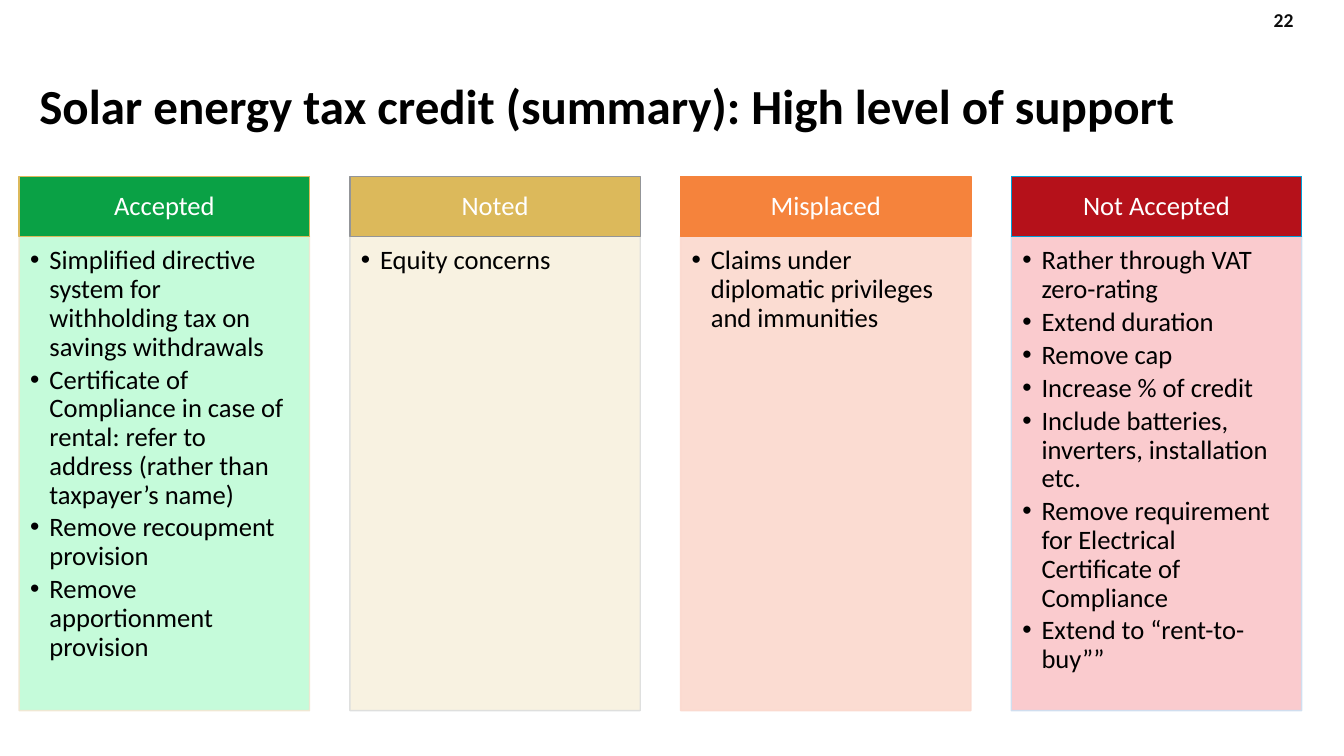
from dataclasses import dataclass

from lxml.etree import SubElement
from pptx import Presentation
from pptx.dml.color import RGBColor
from pptx.enum.shapes import MSO_SHAPE
from pptx.enum.text import MSO_ANCHOR, MSO_AUTO_SIZE, PP_ALIGN
from pptx.oxml.ns import qn
from pptx.shapes.autoshape import Shape
from pptx.slide import Slide
from pptx.util import Length, Pt

PX = 9144  # 100 px to the inch
FONT = "Calibri"

BLACK = RGBColor(0x00, 0x00, 0x00)
INK = RGBColor(0x0D, 0x0D, 0x0D)
WHITE = RGBColor(0xFF, 0xFF, 0xFF)
GREEN = RGBColor(0x0A, 0xA1, 0x45)
MINT = RGBColor(0xBF, 0xFB, 0xD7)
GOLD = RGBColor(0xDC, 0xB9, 0x5B)
SAND = RGBColor(0xF2, 0xE6, 0xD2)
CREAM = RGBColor(0xF8, 0xF1, 0xDE)
GREY = RGBColor(0x93, 0x95, 0x98)
SILVER = RGBColor(0xDC, 0xDD, 0xDD)
ORANGE = RGBColor(0xF5, 0x83, 0x3C)
PEACH = RGBColor(0xFB, 0xD9, 0xCE)
RED = RGBColor(0xB5, 0x11, 0x1A)
PINK = RGBColor(0xFA, 0xC6, 0xC9)
BLUE = RGBColor(0x00, 0xA0, 0xD9)
ICE = RGBColor(0xCC, 0xDF, 0xF1)

LEFT, STEP, WIDTH = 19, 328, 288
HEAD_TOP, HEAD_HIGH = 175, 60
BODY_TOP, BODY_HIGH = 234, 471
INDENT = 19


@dataclass(frozen=True)
class Column:
    name: str
    fill: RGBColor
    edge: RGBColor
    tint: RGBColor
    rim: RGBColor
    items: tuple[str, ...]


COLUMNS = (
    Column("Accepted", GREEN, GOLD, MINT, SAND, (
        "Simplified directive system for withholding tax on savings withdrawals",
        "Certificate of Compliance in case of rental: refer to address "
        "(rather than taxpayer’s name)",
        "Remove recoupment provision",
        "Remove apportionment provision",
    )),
    Column("Noted", GOLD, GREY, CREAM, SILVER, ("Equity concerns",)),
    Column("Misplaced", ORANGE, ORANGE, PEACH, PEACH, (
        "Claims under diplomatic privileges and immunities",
    )),
    Column("Not Accepted", RED, BLUE, PINK, ICE, (
        "Rather through VAT zero-rating",
        "Extend duration",
        "Remove cap",
        "Increase % of credit",
        "Include batteries, inverters, installation etc.",
        "Remove requirement for Electrical Certificate of Compliance",
        "Extend to “rent-to-buy””",
    )),
)


def place(shape: Shape, x: int, y: int, w: int, h: int) -> None:
    shape.left, shape.top = x * PX, y * PX
    shape.width, shape.height = w * PX, h * PX


def write(shape: Shape, *lines: str, size: int = 19, color: RGBColor = BLACK,
          bold: bool = False, align: PP_ALIGN = PP_ALIGN.LEFT,
          anchor: MSO_ANCHOR = MSO_ANCHOR.MIDDLE,
          pad: tuple[int, int, int, int] = (10, 5, 10, 5),
          pitch: float | Length = 0.9, after: int = 0,
          bullet: bool = False) -> None:
    """Fill the shape with one paragraph per line; pad is left, top, right, bottom."""
    frame = shape.text_frame
    frame.word_wrap = True
    frame.auto_size = MSO_AUTO_SIZE.NONE
    frame.vertical_anchor = anchor
    (frame.margin_left, frame.margin_top,
     frame.margin_right, frame.margin_bottom) = (side * PX for side in pad)
    for i, line in enumerate(lines):
        para = frame.add_paragraph() if i else frame.paragraphs[0]
        if bullet:
            props = para._p.get_or_add_pPr()
            props.set("marL", str(INDENT * PX))
            props.set("indent", str(-INDENT * PX))
            SubElement(props, qn("a:buChar"), char="•")
        para.alignment = align
        para.line_spacing = pitch
        para.space_before = Pt(0)
        para.space_after = Pt(after)
        run = para.add_run()
        run.text = line
        font = run.font
        font.name, font.size, font.bold = FONT, Pt(size), bold
        font.color.rgb = color


def paint(shape: Shape, fill: RGBColor, edge: RGBColor, alpha: int = 100) -> None:
    """Set fill and outline, both at alpha percent."""
    shape.shadow.inherit = False
    shape.fill.solid()
    shape.fill.fore_color.rgb = fill
    shape.line.color.rgb = edge
    shape.line.width = Pt(1)
    if alpha < 100:
        for tone in shape._element.spPr.iter(qn("a:srgbClr")):
            SubElement(tone, qn("a:alpha"), val=str(alpha * 1000))


def draw(slide: Slide, body: Shape, col: Column, x: int) -> None:
    """Draw the heading of a column and its list."""
    head = slide.shapes.add_shape(MSO_SHAPE.RECTANGLE, 0, 0, 0, 0)
    place(head, x, HEAD_TOP, WIDTH, HEAD_HIGH)
    paint(head, col.fill, col.edge)
    write(head, col.name, color=WHITE, align=PP_ALIGN.CENTER, pad=(15, 8, 15, 8))

    place(body, x, BODY_TOP, WIDTH, BODY_HIGH)
    paint(body, col.tint, col.rim, alpha=90)
    write(body, *col.items, anchor=MSO_ANCHOR.TOP, pad=(11, 11, 15, 17),
          after=3, bullet=True)


def main() -> None:
    deck = Presentation()
    deck.slide_width, deck.slide_height = 1333 * PX, 750 * PX
    # The comparison layout has a title and four bodies.
    slide = deck.slides.add_slide(deck.slide_layouts.get_by_name("Comparison"))
    title, *bodies = slide.placeholders

    page = slide.shapes.add_textbox(0, 0, 0, 0)
    place(page, 1244, 0, 59, 40)
    write(page, "22", size=14, color=INK, bold=True, align=PP_ALIGN.RIGHT,
          pad=(0, 5, 20, 5), pitch=1.0)

    place(title, 29, 63, 1273, 98)
    write(title, "Solar energy tax credit (summary): High level of support",
          size=35, bold=True, pitch=Pt(30.8))

    for i, (body, col) in enumerate(zip(bodies, COLUMNS)):
        draw(slide, body, col, LEFT + i * STEP)
    deck.save("out.pptx")


if __name__ == "__main__":
    main()
